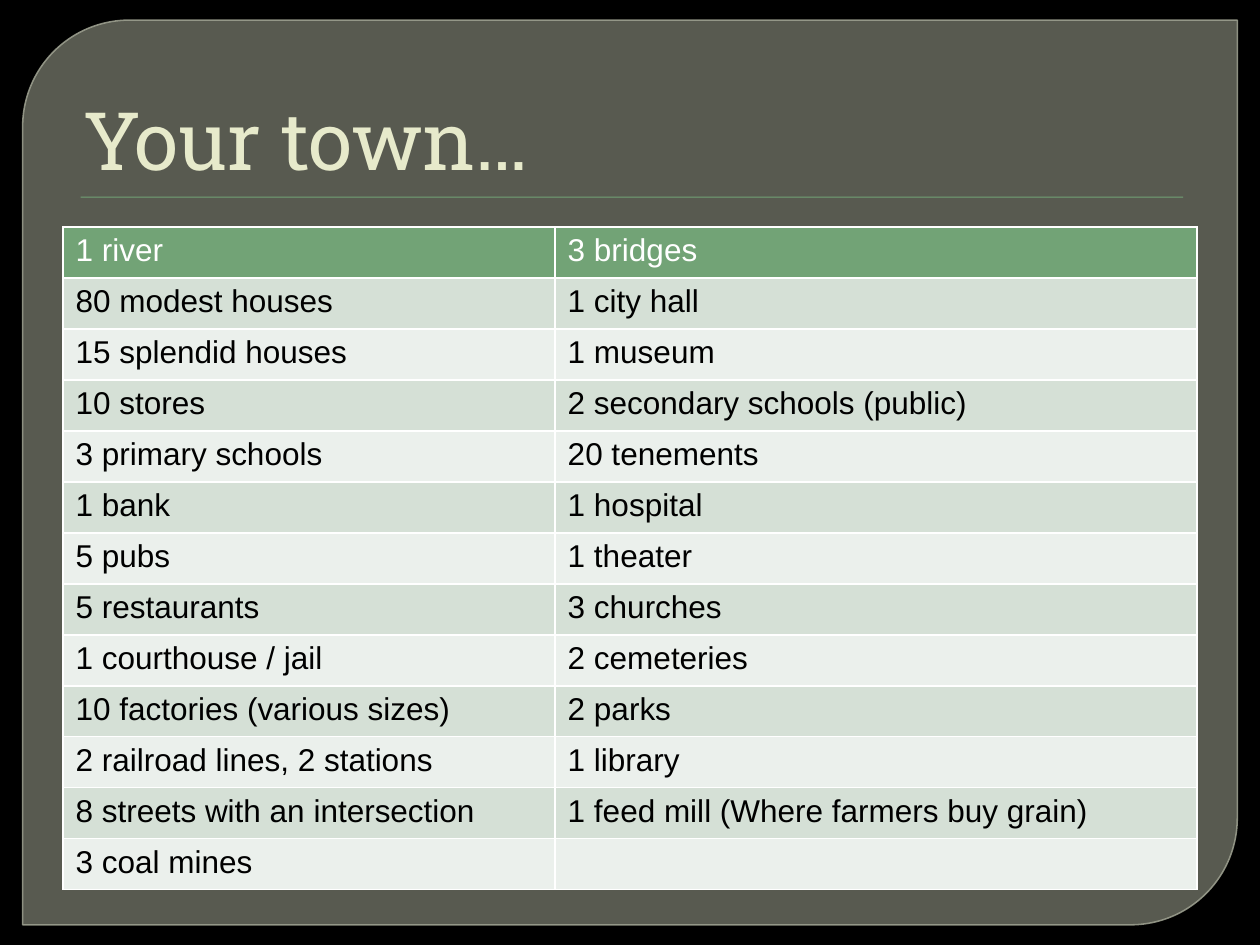
from lxml.etree import SubElement
from pptx import Presentation
from pptx.dml.color import RGBColor
from pptx.enum.shapes import MSO_SHAPE
from pptx.enum.text import MSO_ANCHOR
from pptx.oxml import parse_xml
from pptx.oxml.ns import nsdecls, qn
from pptx.util import Inches, Pt

WIDTH, HEIGHT = 10, 7.5
MARGIN = 0.05 * WIDTH
COLORS = {
    "background": "000000", "panel": "888B7B", "outline": "9DA090",
    "green": "72A376", "title": "E7EACB", "band_dark": "D5E0D6",
    "band_light": "EBF0EC", "white": "FFFFFF", "black": "000000",
}
COLUMN_SHARES = (0.434, 0.566)
ROW_HEIGHT = 0.405
TOWN = [
    ("1 river", "3 bridges"),
    ("80 modest houses", "1 city hall"),
    ("15 splendid houses", "1 museum"),
    ("10 stores", "2 secondary schools (public)"),
    ("3 primary schools", "20 tenements"),
    ("1 bank", "1 hospital"),
    ("5 pubs", "1 theater"),
    ("5 restaurants", "3 churches"),
    ("1 courthouse / jail", "2 cemeteries"),
    ("10 factories (various sizes)", "2 parks"),
    ("2 railroad lines, 2 stations", "1 library"),
    ("8 streets with an intersection", "1 feed mill (Where farmers buy grain)"),
    ("3 coal mines", ""),
]


def rgb(name):
    return RGBColor.from_string(COLORS[name])


def paint(fill, name):
    fill.solid()
    fill.fore_color.rgb = rgb(name)


def set_alpha(sp, tag, percent):
    """Make the fill or line colour found under tag partly transparent."""
    color = sp._element.spPr.find(tag).find(qn("a:srgbClr"))
    SubElement(color, qn("a:alpha"), val=str(percent * 1000))


def add_block(s, kind, box, color):
    sp = s.shapes.add_shape(kind, *map(Inches, box))
    sp.shadow.inherit = False
    paint(sp.fill, color)
    sp.line.fill.background()
    return sp


def add_panel(s):
    sp = add_block(s, MSO_SHAPE.ROUND_2_DIAG_RECTANGLE,
                   (0.18, 0.16, 9.64, 7.18), "panel")
    sp.adjustments[0] = 0.118
    set_alpha(sp, qn("a:solidFill"), 65)
    paint(sp.line.fill, "outline")
    sp.line.width = Pt(0.87)
    set_alpha(sp, f"{qn('a:ln')}/{qn('a:solidFill')}", 88)


def add_run(p, text, size, font, color):
    r = p.add_run()
    r.text = text
    r.font.size = Pt(size)
    r.font.name = font
    r.font.bold = False
    r.font.color.rgb = rgb(color)


def add_title(s, text):
    box = (MARGIN, 0.28, WIDTH - 2 * MARGIN, 1.25)
    tf = s.shapes.add_textbox(*map(Inches, box)).text_frame
    tf.word_wrap = True
    tf.vertical_anchor = MSO_ANCHOR.BOTTOM
    tf.margin_left = Inches(0.16)
    add_run(tf.paragraphs[0], text, 46, "Roboto Slab", "title")


def add_borders(cell):
    tcPr = cell._tc.get_or_add_tcPr()
    for i, side in enumerate(("lnL", "lnR", "lnT", "lnB")):
        tcPr.insert(i, parse_xml(
            f'<a:{side} {nsdecls("a")} w="{Pt(1)}"><a:solidFill>'
            f'<a:srgbClr val="{COLORS["white"]}"/></a:solidFill></a:{side}>'))


def add_town_table(s, rows):
    width = WIDTH - 2 * MARGIN
    box = (MARGIN, 0.24 * HEIGHT, width, ROW_HEIGHT * len(rows))
    table = s.shapes.add_table(len(rows), len(COLUMN_SHARES),
                               *map(Inches, box)).table
    table.first_row = table.horz_banding = False
    for column, share in zip(table.columns, COLUMN_SHARES):
        column.width = Inches(width * share)
    for i, texts in enumerate(rows):
        table.rows[i].height = Inches(ROW_HEIGHT)
        band = "green" if i == 0 else "band_dark" if i % 2 else "band_light"
        for j, text in enumerate(texts):
            cell = table.cell(i, j)
            paint(cell.fill, band)
            add_borders(cell)
            if text:
                add_run(cell.text_frame.paragraphs[0], text, 18, "Arial",
                        "black" if i else "white")


def main():
    prs = Presentation()
    prs.slide_width, prs.slide_height = Inches(WIDTH), Inches(HEIGHT)
    s = prs.slides.add_slide(prs.slide_layouts[6])
    paint(s.background.fill, "background")

    # Backdrop and the rule under the title
    add_panel(s)
    add_block(s, MSO_SHAPE.RECTANGLE, (0.64, 1.56, 8.75, 0.01), "green")

    # Content
    add_title(s, "Your town…")
    add_town_table(s, TOWN)
    prs.save("out.pptx")


if __name__ == "__main__":
    main()
